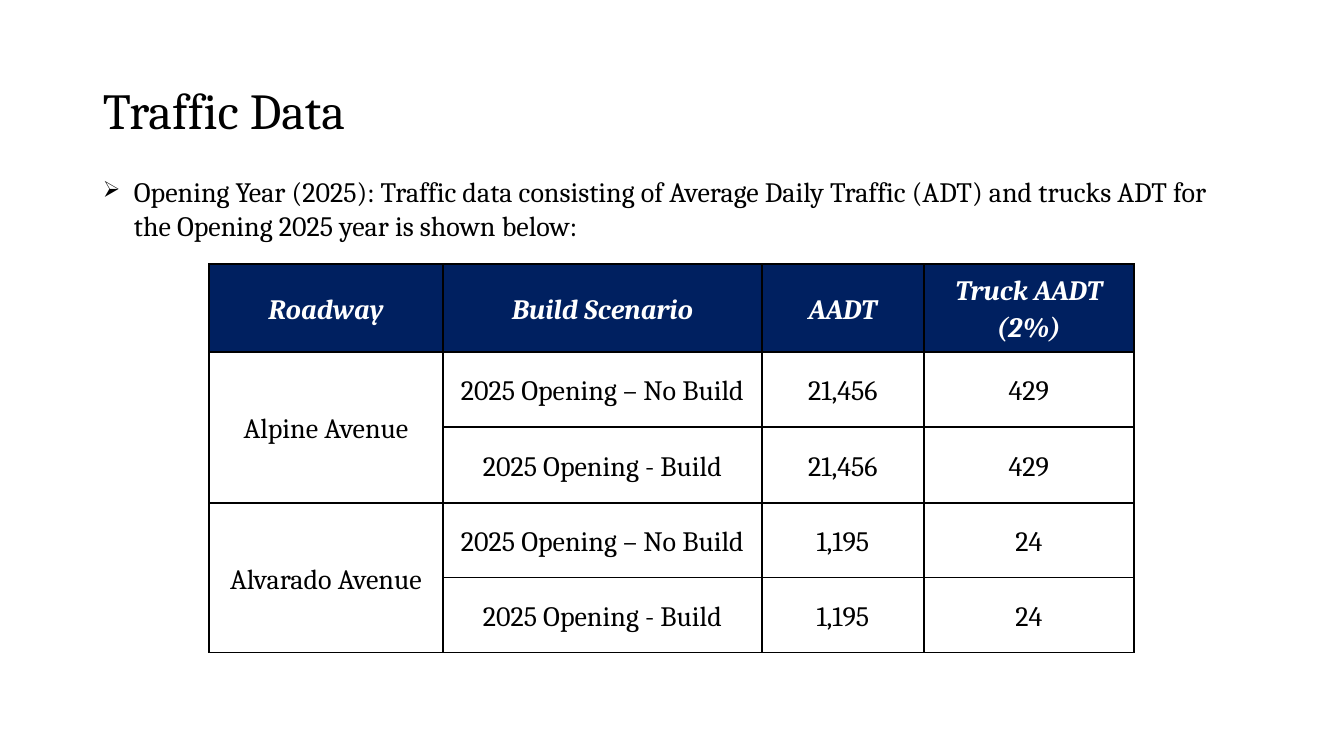
import dataclasses

import lxml.etree
import pptx
import pptx.dml.color
import pptx.enum.text
import pptx.oxml.ns
import pptx.util

EMU_PER_PX = 914400 / 100.8
CENTER = pptx.enum.text.PP_ALIGN.CENTER
MIDDLE = pptx.enum.text.MSO_ANCHOR.MIDDLE


@dataclasses.dataclass
class Theme:
    font: str = "Cambria"
    ink: str = "000000"
    paper: str = "FFFFFF"
    navy: str = "002060"
    title_size: int = 36
    body_size: int = 20
    border_width: int = 1


def px(length):
    return pptx.util.Emu(round(length * EMU_PER_PX))


def rgb(color):
    return pptx.dml.color.RGBColor.from_string(color)


def add_xml(parent, tag, **attributes):
    return lxml.etree.SubElement(parent, pptx.oxml.ns.qn(tag), **attributes)


class SlideBuilder:
    def __init__(self, page, theme):
        self.page = page
        self.theme = theme
        page.background.fill.solid()
        page.background.fill.fore_color.rgb = rgb(theme.paper)

    def style(self, para, size, color, strong=False):
        para.font.name = self.theme.font
        para.font.size = pptx.util.Pt(size)
        para.font.color.rgb = rgb(color)
        para.font.bold = para.font.italic = strong

    def text_box(self, left, top, width, height, text):
        box = self.page.shapes.add_textbox(px(left), px(top), px(width), px(height))
        box.text_frame.word_wrap = True
        para = box.text_frame.paragraphs[0]
        para.text = text
        return box.text_frame, para

    def title(self, left, top, width, height, text):
        frame, para = self.text_box(left, top, width, height, text)
        frame.vertical_anchor = MIDDLE
        para.line_spacing = 0.9
        self.style(para, self.theme.title_size, self.theme.ink)

    def bullet(self, left, top, width, height, text, indent):
        para = self.text_box(left, top, width, height, text)[1]
        props = para._p.get_or_add_pPr()
        props.set("marL", str(px(indent)))
        props.set("indent", str(-px(indent)))
        add_xml(props, "a:buSzPct", val="80000")
        add_xml(props, "a:buChar", char="➢")
        para.space_before = para.space_after = pptx.util.Pt(3)
        self.style(para, self.theme.body_size, self.theme.ink)

    def borders(self, cell):
        props = cell._tc.get_or_add_tcPr()
        width = str(pptx.util.Pt(self.theme.border_width))
        for position, side in enumerate(("a:lnL", "a:lnR", "a:lnT", "a:lnB")):
            line = add_xml(props, side, w=width)
            add_xml(add_xml(line, "a:solidFill"), "a:srgbClr", val=self.theme.ink)
            props.insert(position, line)

    def cell(self, cell, text, header):
        cell.vertical_anchor = MIDDLE
        if header:
            cell.fill.solid()
            cell.fill.fore_color.rgb = rgb(self.theme.navy)
        else:
            cell.fill.background()
        self.borders(cell)
        para = cell.text_frame.paragraphs[0]
        para.text = text
        para.alignment = CENTER
        para.line_spacing = 1.15
        color = self.theme.paper if header else self.theme.ink
        self.style(para, self.theme.body_size, color, header)

    def table(self, left, top, widths, heights, rows):
        table = self.page.shapes.add_table(
            len(rows), len(widths), px(left), px(top), px(sum(widths)), px(sum(heights))
        ).table
        table.first_row = table.horz_banding = False
        for column, width in zip(table.columns, widths):
            column.width = px(width)
        for row, height in zip(table.rows, heights):
            row.height = px(height)
        for r, values in enumerate(rows):
            for c, value in enumerate(values):
                self.cell(table.cell(r, c), value, header=r == 0)
        return table


def main():
    deck = pptx.Presentation()
    deck.slide_width, deck.slide_height = px(1344), px(756)
    page = deck.slides.add_slide(deck.slide_layouts[6])
    builder = SlideBuilder(page, Theme())

    # Heading and introduction
    builder.title(93, 40, 1159, 146, "Traffic Data")
    builder.bullet(
        93, 170, 1159, 78,
        "Opening Year (2025): Traffic data consisting of Average Daily Traffic (ADT) "
        "and trucks ADT for the Opening 2025 year is shown below:",
        indent=31,
    )

    # Traffic table: two scenarios for each roadway
    rows = [("Roadway", "Build Scenario", "AADT", "Truck AADT (2%)")]
    for roadway, traffic, trucks in (
        ("Alpine Avenue", "21,456", "429"),
        ("Alvarado Avenue", "1,195", "24"),
    ):
        rows.append((roadway, "2025 Opening – No Build", traffic, trucks))
        rows.append(("", "2025 Opening - Build", traffic, trucks))
    table = builder.table(209, 264, (234, 319, 162, 210), (88, 75, 76, 75, 75), rows)
    for first in (1, 3):
        table.cell(first, 0).merge(table.cell(first + 1, 0))

    deck.save("out.pptx")


if __name__ == "__main__":
    main()
